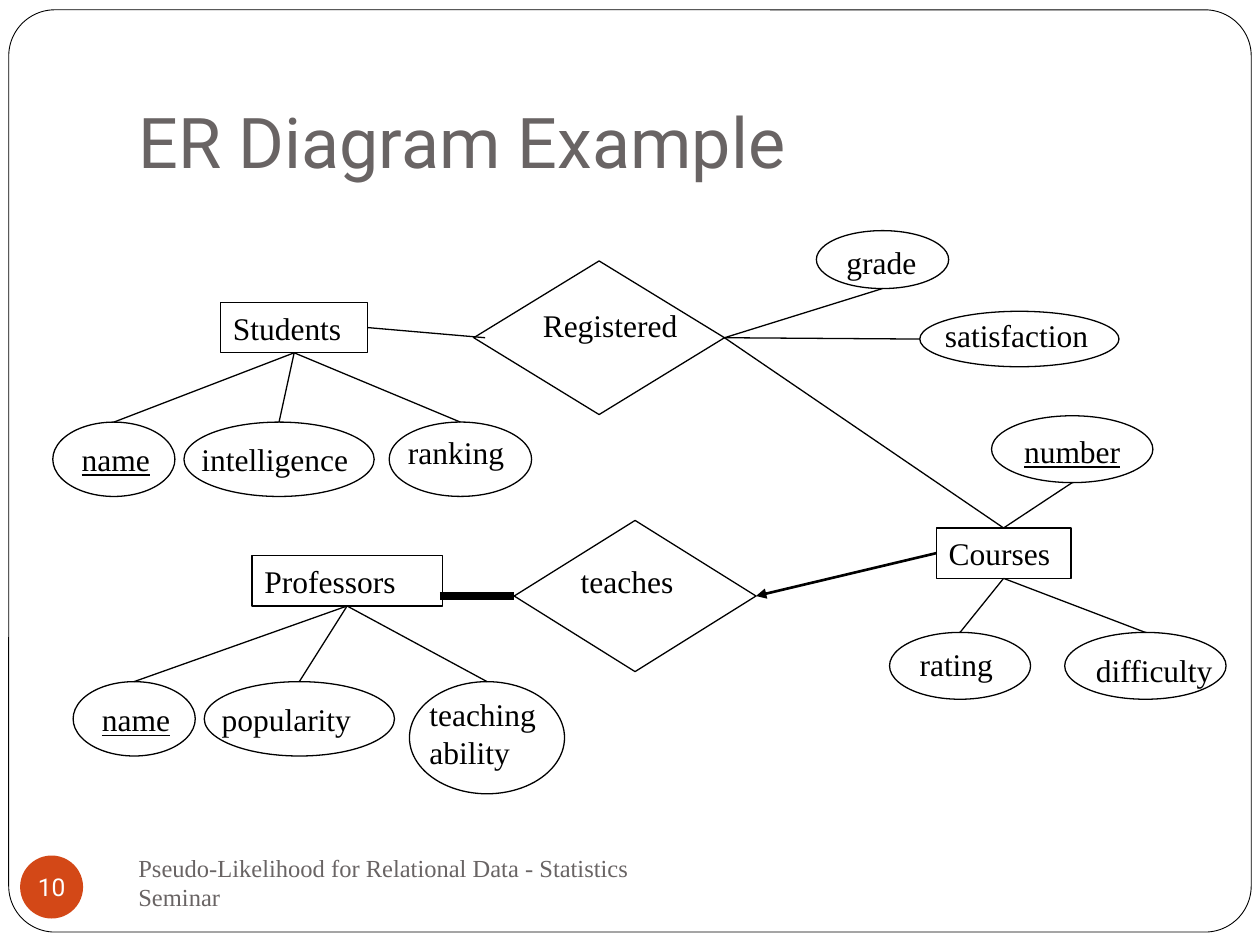
from lxml import etree
from pptx import Presentation
from pptx.dml.color import RGBColor
from pptx.enum.shapes import MSO_CONNECTOR, MSO_SHAPE
from pptx.enum.text import MSO_ANCHOR, MSO_AUTO_SIZE, PP_ALIGN
from pptx.oxml.ns import qn
from pptx.util import Pt

RECT, OVAL, DIAMOND = MSO_SHAPE.RECTANGLE, MSO_SHAPE.OVAL, MSO_SHAPE.DIAMOND
ROUNDED, STRAIGHT = MSO_SHAPE.ROUNDED_RECTANGLE, MSO_CONNECTOR.STRAIGHT
TOP, MIDDLE, BOTTOM = MSO_ANCHOR.TOP, MSO_ANCHOR.MIDDLE, MSO_ANCHOR.BOTTOM
LEFT, CENTER = PP_ALIGN.LEFT, PP_ALIGN.CENTER
UP_SIDE, LEFT_SIDE, DOWN_SIDE, RIGHT_SIDE = range(4)

COLORS = {"ink": "000000", "paper": "FFFFFF", "muted": "696464", "accent": "D34817"}
SERIF, SANS = "Times New Roman", "Roboto"
INSETS = (7.2, 3.6, 7.2, 3.6)
LABEL_INSETS = (7.2, 3.6, 0, 3.6)


def color(name):
    """Return the named colour."""
    return RGBColor.from_string(COLORS[name])


def set_all(target, values):
    """Set each attribute in the dict on the target."""
    for name, value in values.items():
        setattr(target, name, value)


def write(shape, text, size=18, font=SERIF, ink="ink", anchor=TOP, align=LEFT,
          insets=INSETS, underline=None):
    """Fill a shape's text frame with one formatted paragraph."""
    left, top, right, bottom = (Pt(inset) for inset in insets)
    frame = shape.text_frame
    frame.text = text
    set_all(frame, {
        "word_wrap": True, "auto_size": MSO_AUTO_SIZE.NONE, "vertical_anchor": anchor,
        "margin_left": left, "margin_top": top,
        "margin_right": right, "margin_bottom": bottom,
    })
    paragraph = frame.paragraphs[0]
    paragraph.alignment = align
    for run in paragraph.runs:
        set_all(run.font, {"name": font, "size": Pt(size), "underline": underline})
        run.font.color.rgb = color(ink)


def outline(slide, kind, box, fill=None, line="ink", weight=0.75):
    """Add a preset shape with an optional fill and line."""
    shape = slide.shapes.add_shape(kind, *(Pt(length) for length in box))
    shape.shadow.inherit = False
    if fill:
        shape.fill.solid()
        shape.fill.fore_color.rgb = color(fill)
    else:
        shape.fill.background()
    if line:
        shape.line.color.rgb = color(line)
        shape.line.width = Pt(weight)
    else:
        shape.line.fill.background()
    return shape


def label(slide, box, text, **style):
    """Add a text box."""
    text_box = slide.shapes.add_textbox(*(Pt(length) for length in box))
    write(text_box, text, **style)


def link(slide, start=None, end=None, begin=(0, 0), finish=(0, 0), weight=0.75, arrow=False):
    """Draw a straight line between points or (shape, side) joints."""
    line = slide.shapes.add_connector(STRAIGHT, *begin, *finish)
    if start:
        line.begin_connect(*start)
    if end:
        line.end_connect(*end)
    line.line.color.rgb = color("ink")
    line.line.width = Pt(weight)
    if arrow:
        etree.SubElement(line.line._get_or_add_ln(), qn("a:tailEnd"), type="triangle")
    etree.SubElement(line._element.spPr, qn("a:effectLst"))


def side_point(shape, side):
    """Return the middle of one side of a shape."""
    across = {LEFT_SIDE: 0, RIGHT_SIDE: shape.width}.get(side, shape.width // 2)
    down = {UP_SIDE: 0, DOWN_SIDE: shape.height}.get(side, shape.height // 2)
    return shape.left + across, shape.top + down


def add_frame(slide, box):
    """Draw the rounded page border behind the title."""
    border = outline(slide, ROUNDED, box, fill="paper", weight=0.5)
    border.adjustments[0] = 0.05
    border._element.addnext(slide.shapes.title._element)


def add_title(slide, box):
    """Place the title."""
    title = slide.shapes.title
    set_all(title, dict(zip(("left", "top", "width", "height"), map(Pt, box))))
    write(title, "ER Diagram Example", size=40, font=SANS, ink="muted", anchor=BOTTOM,
          insets=(7.2, 3.6, 7.2, 7.2))


def add_footer(slide, box):
    """Place the numbered badge and the seminar name."""
    left, top, width, height = box
    badge = outline(slide, OVAL, (left, top + 2.9, 36, 36), fill="accent", line=None)
    write(badge, "10", size=14, font=SANS, ink="paper", anchor=MIDDLE, align=CENTER,
          insets=(0, 0, 0, 0))
    label(slide, (left + 60.5, top, width - 60.5, height),
          "Pseudo-Likelihood for Relational Data - Statistics Seminar",
          size=14, ink="muted", anchor=MIDDLE)


def add_entity(slide, box, text):
    """Draw an entity rectangle."""
    entity = outline(slide, RECT, box)
    write(entity, text)
    return entity


def add_relationship(slide, box, text, offset):
    """Draw a relationship diamond with its label."""
    left, top, width, height = box
    across, down = offset
    label(slide, (left + across, top + down, width - across, 28.8), text,
          insets=LABEL_INSETS)
    return outline(slide, DIAMOND, box)


def add_attributes(slide, origin, owner, attributes):
    """Draw attribute ovals placed from the origin and linked to their owner."""
    left, top = origin
    for text, box, offset, owner_side, oval_side, is_key in attributes:
        x, y, width, height = box
        x, y = left + x, top + y
        across, down = offset
        label(slide, (x + across, y + down, width - across, 28.8), text,
              insets=LABEL_INSETS, underline=is_key or None)
        oval = outline(slide, OVAL, (x, y, width, height))
        link(slide, start=(owner, owner_side), finish=side_point(oval, oval_side))


def add_students(slide, box):
    """Draw the student entity with its attributes."""
    left, top, _, _ = box
    students = add_entity(slide, (left + 95.8, top, 84.2, 28.8), "Students")
    add_attributes(slide, (left, top + 68.4), students, [
        ("name", (0, 0, 69.8, 42.5), (9.4, 6.5), DOWN_SIDE, UP_SIDE, True),
        ("intelligence", (74.9, 0, 108.7, 42.5), (2.9, 6.5), DOWN_SIDE, UP_SIDE, False),
        ("ranking", (192.2, 0, 81.4, 42.5), (3.6, 2.9), DOWN_SIDE, UP_SIDE, False),
    ])
    return students


def add_professors(slide, box):
    """Draw the professor entity with its attributes."""
    left, top, _, _ = box
    professors = add_entity(slide, (left + 102.2, top, 108.7, 28.8), "Professors")
    add_attributes(slide, (left, top + 72), professors, [
        ("name", (0, 0, 69.8, 42.5), (9.4, 7.2), DOWN_SIDE, UP_SIDE, True),
        ("popularity", (74.9, 0, 108.7, 42.5), (2.9, 7.2), DOWN_SIDE, UP_SIDE, False),
        ("teaching\vability", (192.2, 0, 88.6, 64.1), (4.3, 4.3), DOWN_SIDE, UP_SIDE, False),
    ])


def add_courses(slide, box):
    """Draw the course entity with its attributes."""
    left, top, _, _ = box
    courses = add_entity(slide, (left + 26.7, top + 64.1, 77, 28.8), "Courses")
    add_attributes(slide, (left, top), courses, [
        ("number", (58.3, 0, 92.2, 38.2), (11.5, 5.8), UP_SIDE, DOWN_SIDE, True),
        ("rating", (0, 123.8, 80.6, 38.2), (10.1, 3.6), DOWN_SIDE, UP_SIDE, False),
        ("difficulty", (100.1, 123.8, 92.2, 38.2), (10.8, 7.2), DOWN_SIDE, UP_SIDE, False),
    ])
    return courses


def add_registered(slide, box):
    """Draw the registration relationship with its attributes."""
    left, top, _, _ = box
    registered = add_relationship(slide, (left, top + 17.3, 143.3, 87.8), "Registered",
                                  (32.4, 22.3))
    add_attributes(slide, (left, top), registered, [
        ("grade", (195.8, 0, 75.6, 33.1), (10.1, 3.6), RIGHT_SIDE, DOWN_SIDE, False),
        ("satisfaction", (254.9, 46.1, 113.8, 31.7), (7.2, -0.7), RIGHT_SIDE, LEFT_SIDE, False),
    ])
    return registered


def main():
    """Build and save the slide."""
    deck = Presentation()
    deck.slide_width, deck.slide_height = Pt(720), Pt(540)
    slide = deck.slides.add_slide(deck.slide_layouts[5])
    add_frame(slide, (5, 5.6, 710, 527))
    add_title(slide, (72, 21.6, 612, 90))
    add_footer(slide, (11.5, 486, 372.3, 36))
    students = add_students(slide, (30.2, 172.8, 273.6, 110.9))
    add_professors(slide, (41.8, 317.5, 280.8, 136.1))
    courses = add_courses(slide, (508.3, 237.6, 192.3, 162))
    registered = add_registered(slide, (270.7, 131.8, 368.7, 105.1))
    teaches = add_relationship(slide, (293.8, 297.4, 138.2, 86.4), "teaches", (31, 20.2))
    link(slide, start=(students, RIGHT_SIDE), finish=(Pt(277.2), Pt(193)))
    link(slide, start=(registered, RIGHT_SIDE), end=(courses, UP_SIDE))
    link(slide, start=(courses, LEFT_SIDE), end=(teaches, RIGHT_SIDE), weight=1.5, arrow=True)
    link(slide, begin=(Pt(251.3), Pt(340.6)), end=(teaches, LEFT_SIDE), weight=5)
    deck.save("out.pptx")


if __name__ == "__main__":
    main()
